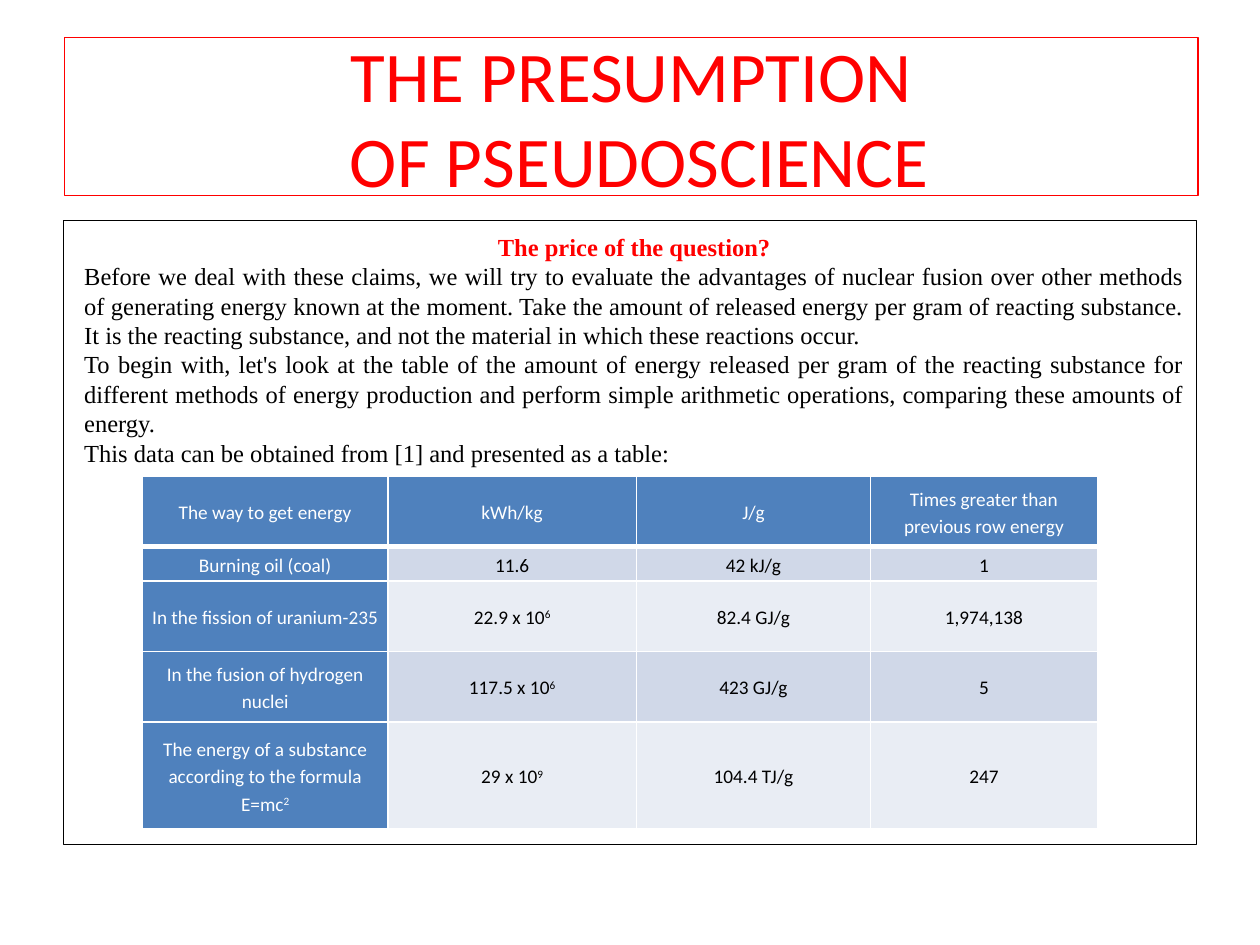
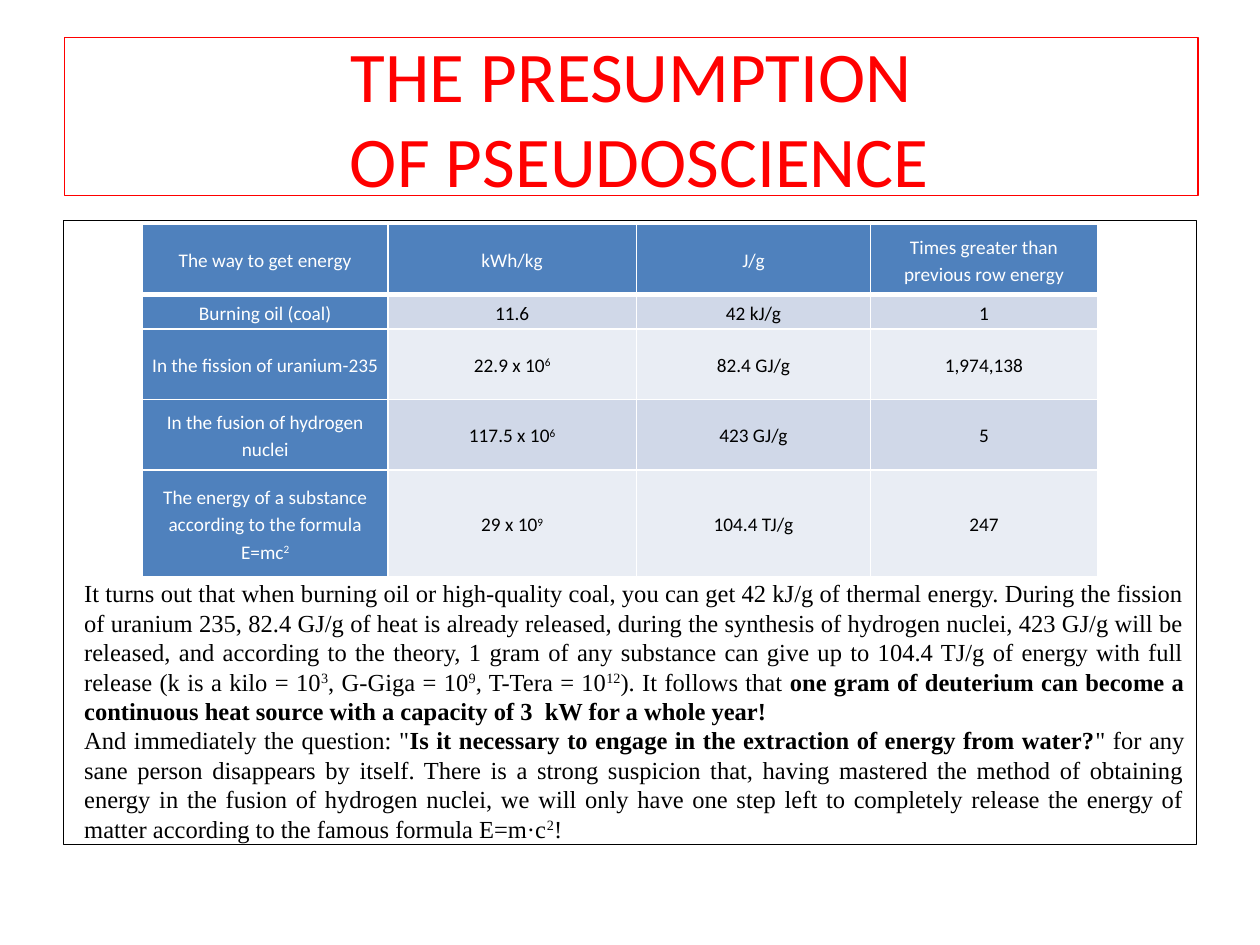
"""Build two slides that compare the energy released by different methods."""
from dataclasses import dataclass

import pptx
import pptx.dml.color
import pptx.enum.shapes
import pptx.enum.text
import pptx.oxml.ns
import pptx.util
from lxml import etree

Inches = pptx.util.Inches
Align = pptx.enum.text.PP_ALIGN
Anchor = pptx.enum.text.MSO_ANCHOR


@dataclass(frozen=True)
class Theme:
    """Colours, fonts and type sizes shared by the slides."""
    red: str = "FF0000"
    black: str = "000000"
    white: str = "FFFFFF"
    header: str = "4F81BD"
    bands: tuple = ("D0D8E8", "E9EDF4")
    sans: str = "Calibri"
    serif: str = "Times New Roman"
    title_size: float = 40.7
    body_size: float = 14
    table_size: float = 11


THEME = Theme()
BOLD = {"bold": True}
RAISED = {"raised": True}
TITLE = ("THE PRESUMPTION", " OF PSEUDOSCIENCE")
COLUMN_WIDTHS = (1.95, 1.97, 1.86, 1.8)
ROW_HEIGHTS = (0.56, 0.27, 0.56, 0.56, 0.85)
ENERGY_ROWS = (
    ("The way to get energy", "kWh/kg", "J/g", "Times greater than previous row energy"),
    ("Burning oil (coal)", "11.6", "42 kJ/g", "1"),
    ("In the fission of uranium-235", ["22.9 x 10", ("6", RAISED)], "82.4 GJ/g", "1,974,138"),
    ("In the fusion of hydrogen nuclei", ["117.5 x 10", ("6", RAISED)], "423 GJ/g", "5"),
    (["The energy of a substance according to the formula E=mc", ("2", RAISED)],
     ["29 x 10", ("9", RAISED)], "104.4 TJ/g", "247"),
)
QUESTION = [("The price of the question?", {"bold": True, "color": THEME.red})]
INTRODUCTION = (
    "Before we deal with these claims, we will try to evaluate the advantages of nuclear "
    "fusion over other methods of generating energy known at the moment. Take the amount of "
    "released energy per gram of reacting substance. It is the reacting substance, and not "
    "the material in which these reactions occur.",
    "To begin with, let's look at the table of the amount of energy released per gram of the "
    "reacting substance for different methods of energy production and perform simple "
    "arithmetic operations, comparing these amounts of energy.",
    "This data can be obtained from [1] and presented as a table:",
)
CONCLUSION = (
    ["It turns out that when burning oil or high-quality coal, you can get 42 kJ/g of thermal "
     "energy. During the fission of uranium 235, 82.4 GJ/g of heat is already released, during "
     "the synthesis of hydrogen nuclei, 423 GJ/g will be released, and according to the theory, "
     "1 gram of any substance can give up to 104.4 TJ/g of energy with full release "
     "(k is a kilo = 10", ("3", RAISED), ", G-Giga = 10", ("9", RAISED), ", T-Tera = 10",
     ("12", RAISED), "). It follows that ",
     ("one gram of deuterium can become a continuous heat source with a capacity of "
      "3  kW for a whole year!", BOLD)],
    ["And immediately the question: \"",
     ("Is it necessary to engage in the extraction of energy from water?", BOLD),
     "\" for any sane person disappears by itself. There is a strong suspicion that, having "
     "mastered the method of obtaining energy in the fusion of hydrogen nuclei, we will only "
     "have one step left to completely release the energy of matter according to the famous "
     "formula E=m·c", ("2", RAISED), "!"],
)


def rgb(color):
    """Return a colour object for a hexadecimal string."""
    return pptx.dml.color.RGBColor.from_string(color)


def add_run(paragraph, text, *, size, font, color, bold=False, raised=False):
    """Add one formatted run to a paragraph."""
    run = paragraph.add_run()
    run.text = text
    run.font.size = pptx.util.Pt(size)
    run.font.name = font
    run.font.bold = bold
    run.font.color.rgb = rgb(color)
    if raised:
        run._r.get_or_add_rPr().set("baseline", "30000")


def fill_paragraph(paragraph, content, align, **style):
    """Write a string, or a list of strings and (text, format) pairs."""
    paragraph.alignment = align
    for piece in [content] if isinstance(content, str) else content:
        text, changes = (piece, {}) if isinstance(piece, str) else piece
        add_run(paragraph, text, **{**style, **changes})


def fill_frame(frame, paragraphs, **style):
    """Write (content, alignment) pairs as paragraphs of a text frame."""
    frame.word_wrap = True
    for index, (content, align) in enumerate(paragraphs):
        paragraph = frame.add_paragraph() if index else frame.paragraphs[0]
        fill_paragraph(paragraph, content, align, **style)


def add_outline(slide, left, top, width, height, color, weight):
    """Add an unfilled rectangle with a thin line."""
    shape = slide.shapes.add_shape(
        pptx.enum.shapes.MSO_SHAPE.RECTANGLE,
        Inches(left), Inches(top), Inches(width), Inches(height))
    shape.shadow.inherit = False
    shape.fill.background()
    shape.line.color.rgb = rgb(color)
    shape.line.width = pptx.util.Pt(weight)
    return shape


def add_body(slide, top, height, paragraphs):
    """Add a text box with body paragraphs."""
    box = slide.shapes.add_textbox(Inches(0.57), Inches(top), Inches(8.93), Inches(height))
    fill_frame(box.text_frame, paragraphs, size=THEME.body_size, font=THEME.serif,
               color=THEME.black)


def set_borders(cell, bottom_weight):
    """Draw white borders around a table cell."""
    properties = cell._tc.get_or_add_tcPr()
    qn = pptx.oxml.ns.qn
    for side, weight in (("L", 1), ("R", 1), ("T", 1), ("B", bottom_weight)):
        line = etree.SubElement(properties, qn(f"a:ln{side}"), w=str(pptx.util.Pt(weight)))
        fill = etree.SubElement(line, qn("a:solidFill"))
        etree.SubElement(fill, qn("a:srgbClr"), val=THEME.white)


def fill_cell(cell, content, row, column):
    """Format one table cell and write its content."""
    is_heading = row == 0 or column == 0
    set_borders(cell, 1 if row else 3)
    cell.fill.solid()
    cell.fill.fore_color.rgb = rgb(THEME.header if is_heading else THEME.bands[(row - 1) % 2])
    cell.vertical_anchor = Anchor.MIDDLE
    cell.margin_left = cell.margin_right = Inches(0.07)
    cell.margin_top = cell.margin_bottom = 0
    paragraph = cell.text_frame.paragraphs[0]
    paragraph.line_spacing = 1.15
    fill_paragraph(paragraph, content, Align.CENTER, size=THEME.table_size, font=THEME.sans,
                   color=THEME.white if is_heading else THEME.black)


def add_energy_table(slide, top):
    """Add the table of released energy."""
    table = slide.shapes.add_table(
        len(ROW_HEIGHTS), len(COLUMN_WIDTHS), Inches(1.13), Inches(top),
        Inches(sum(COLUMN_WIDTHS)), Inches(sum(ROW_HEIGHTS))).table
    for column, width in zip(table.columns, COLUMN_WIDTHS):
        column.width = Inches(width)
    for row, height in zip(table.rows, ROW_HEIGHTS):
        row.height = Inches(height)
    for row, contents in enumerate(ENERGY_ROWS):
        for column, content in enumerate(contents):
            fill_cell(table.cell(row, column), content, row, column)


def add_framed_slide(presentation):
    """Add a blank slide with the shared title and content frame."""
    slide = presentation.slides.add_slide(presentation.slide_layouts[6])
    title = add_outline(slide, 0.51, 0.3, 9, 1.25, THEME.red, 0.75)
    title.text_frame.vertical_anchor = Anchor.MIDDLE
    fill_frame(title.text_frame, [(line, Align.CENTER) for line in TITLE],
               size=THEME.title_size, font=THEME.sans, color=THEME.red)
    add_outline(slide, 0.5, 1.75, 9, 4.95, THEME.black, 0.5)
    return slide


def main():
    """Build and save the presentation."""
    presentation = pptx.Presentation()
    presentation.slide_width = Inches(10)
    presentation.slide_height = Inches(7.5)

    slide = add_framed_slide(presentation)
    add_body(slide, 1.79, 1.99, [(QUESTION, Align.CENTER)]
             + [(text, Align.JUSTIFY) for text in INTRODUCTION])
    add_energy_table(slide, 3.78)

    slide = add_framed_slide(presentation)
    add_energy_table(slide, 1.78)
    add_body(slide, 4.54, 2.22, [(text, Align.JUSTIFY) for text in CONCLUSION])

    presentation.save("out.pptx")


if __name__ == "__main__":
    main()
